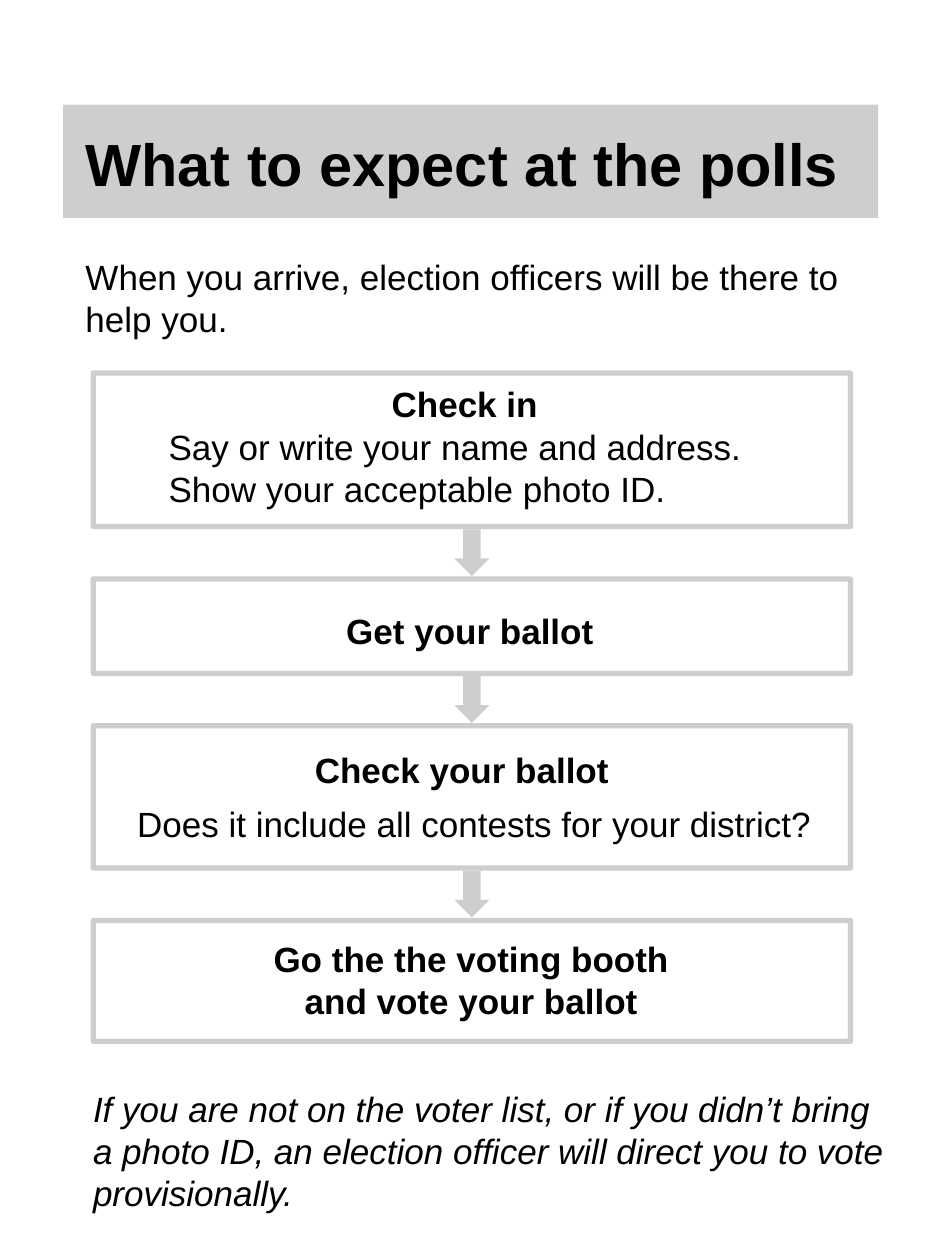
"""Build a one-page voter guide showing the steps at the polls."""
from lxml import etree
from pptx import Presentation
from pptx.dml.color import RGBColor
from pptx.enum.shapes import MSO_SHAPE as Shape
from pptx.enum.text import PP_ALIGN as Align
from pptx.oxml.ns import qn
from pptx.util import Inches, Pt

presentation = Presentation()
presentation.slide_width = Inches(7.5)
presentation.slide_height = Inches(10)
slide = presentation.slides.add_slide(presentation.slide_layouts[6])
column = presentation.slide_width / 100
row = presentation.slide_height / 100


def add_text(text, left, top, width, height, size=20, bold=False, italic=False,
             align=Align.LEFT, color="000000"):
    box = slide.shapes.add_textbox(int(left * column), int(top * row),
                                   int(width * column), int(height * row))
    box.text_frame.word_wrap = True
    box.text_frame.text = text
    for paragraph in box.text_frame.paragraphs:
        paragraph.alignment = align
        for run in paragraph.runs:
            run.font.name = "Arial"
            run.font.size = Pt(size)
            run.font.bold = bold
            run.font.italic = italic
            run.font.color.rgb = RGBColor.from_string(color)


def add_tinted(kind, left, top, width, height, outline=None, color="5F5F5F"):
    shape = slide.shapes.add_shape(kind, int(left * column), int(top * row),
                                   int(width * column), int(height * row))
    shape.shadow.inherit = False
    if outline:
        shape.fill.background()
        shape.line.width = Pt(outline)
        paint = shape.line.fill
    else:
        shape.line.fill.background()
        paint = shape.fill
    paint.solid()
    paint.fore_color.rgb = RGBColor.from_string(color)
    for tint in shape.element.spPr.iter(qn("a:srgbClr")):
        etree.SubElement(tint, qn("a:alpha")).set("val", "30000")


add_tinted(Shape.RECTANGLE, 6.67, 8.3, 86.27, 9)
add_text("What to expect at the polls", 7.73, 9.6, 84.93, 6.7, size=34, bold=True)
add_text("When you arrive, election officers will be there to help you.",
         7.73, 19.8, 84.27, 7.7)

box_left, box_width, gap = 9.87, 80.13, 4.15
arrow_width, arrow_height = 3.73, 3.7
arrow_left = box_left + (box_width - arrow_width) / 2
top = 29.6
for index, height in enumerate([12.2, 7.5, 11.3, 9.6]):
    if index:
        add_tinted(Shape.DOWN_ARROW, arrow_left, top - (gap + arrow_height) / 2,
                   arrow_width, arrow_height)
    add_tinted(Shape.RECTANGLE, box_left, top, box_width, height, outline=3)
    top += height + gap

for heading, left, heading_top, width in [
    ("Check in", 40.13, 29.9, 19.6),
    ("Get your ballot", 35.33, 47.9, 30.93),
    ("Check your ballot", 32, 58.9, 37.73),
]:
    add_text(heading, left, heading_top, width, 4.4, bold=True)

add_text("Say or write your name and address.\nShow your acceptable photo ID.",
         16.53, 33.3, 66.67, 7.7)
add_text("Does it include all contests for your district?", 13.2, 63.2, 76.27, 4.4)
add_text("Go the the voting booth and vote your ballot", 26, 73.9, 47.73, 7.7,
         bold=True, align=Align.CENTER)
add_text("If you are not on the voter list, or if you didn’t bring a photo ID, "
         "an election officer will direct you to vote provisionally.",
         8.53, 85.8, 86.67, 11.1, italic=True)

presentation.save("out.pptx")
